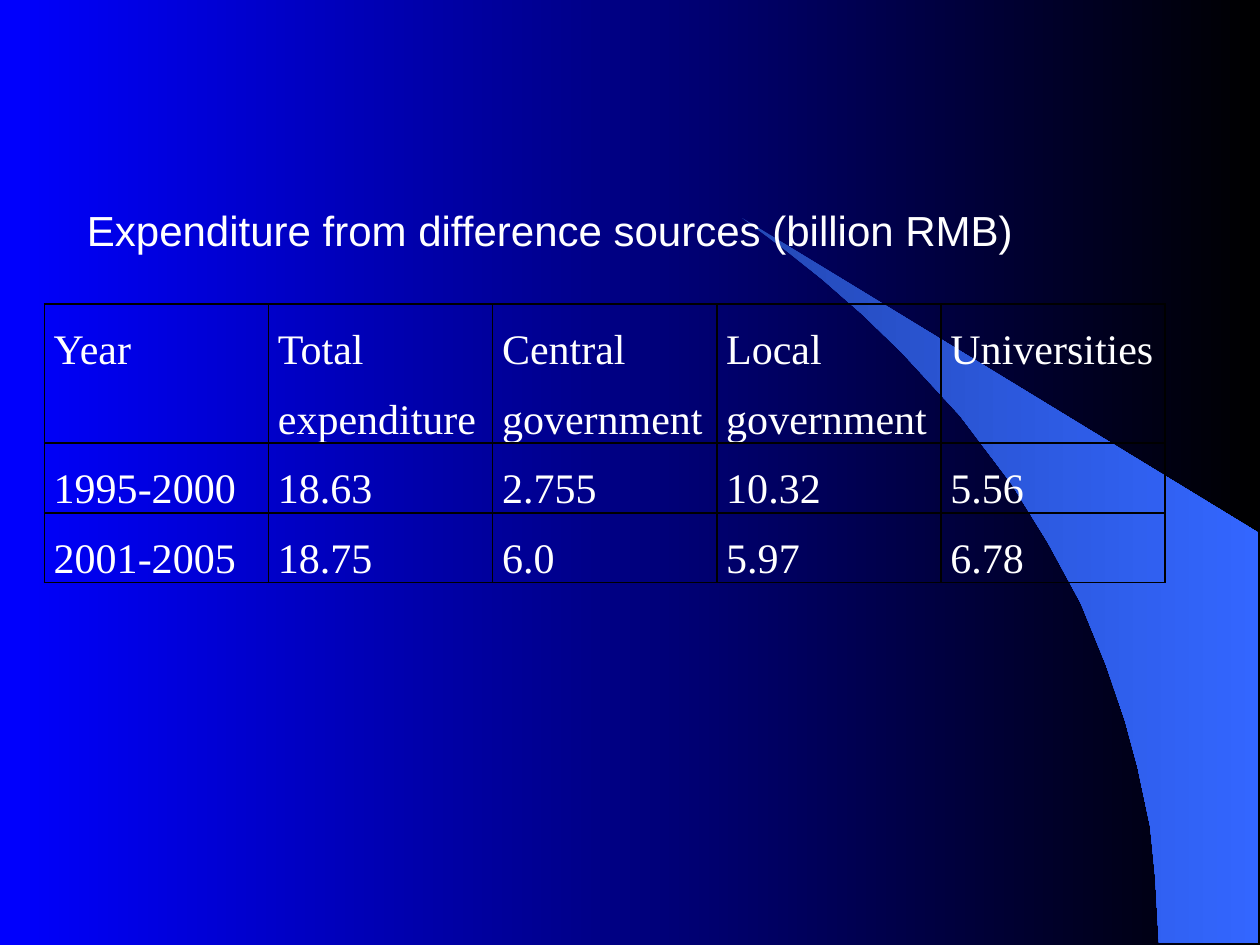
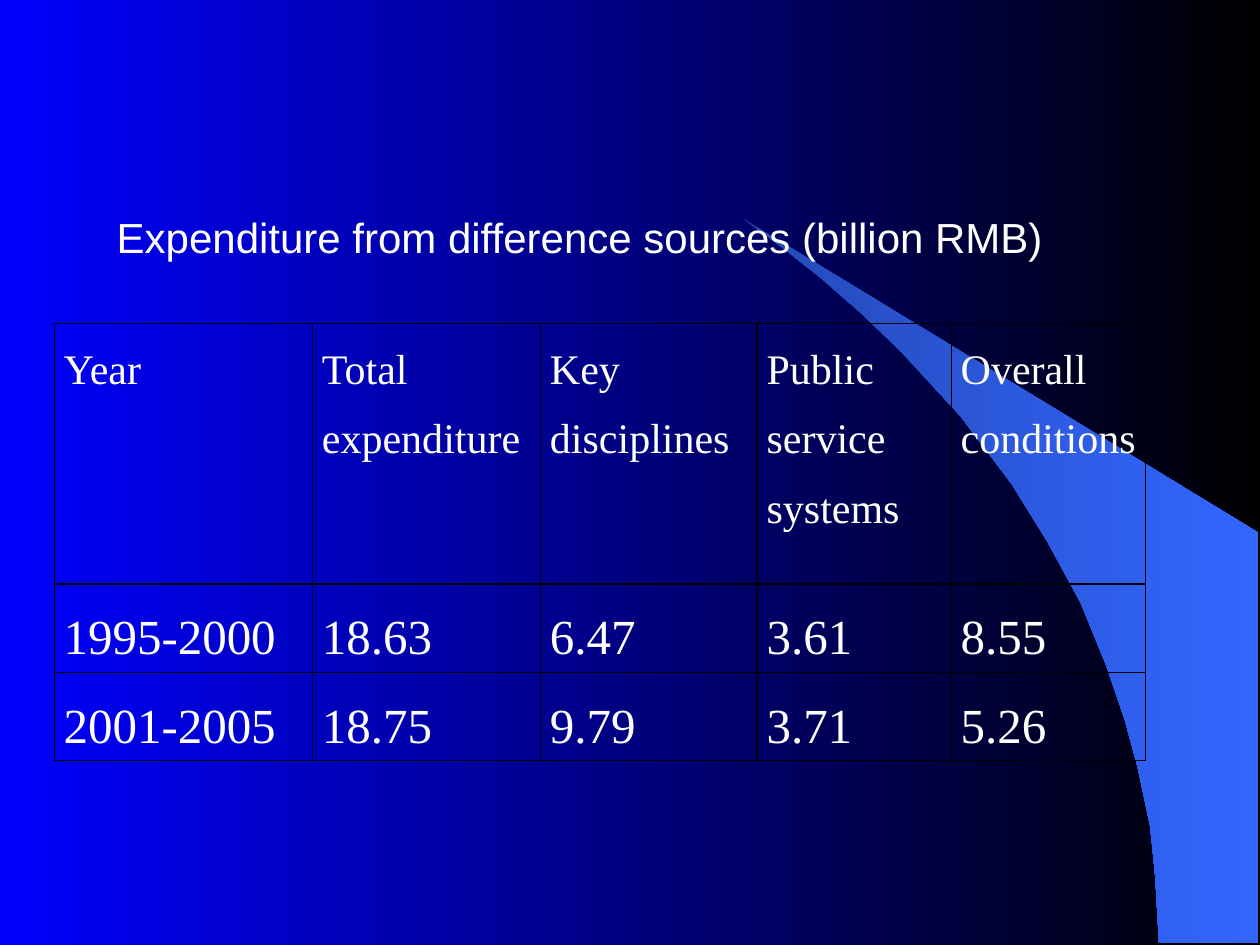
from collections import namedtuple
from dataclasses import dataclass

from lxml.etree import SubElement
from pptx import Presentation
from pptx.dml.color import RGBColor
from pptx.enum.text import MSO_ANCHOR, MSO_AUTO_SIZE, PP_ALIGN
from pptx.oxml.ns import qn
from pptx.util import Pt

Box = namedtuple("Box", "left top width height")


@dataclass(frozen=True)
class Theme:
    background: tuple = ("0000FF", "000000")
    crescent: tuple = ("2449B6", "3366FF")
    text: str = "FFFFFF"
    border: str = "000000"
    title_font: str = "Arial"
    table_font: str = "Times New Roman"
    title_size: int = 24
    header_size: int = 24
    line_spacing: float = 1.5
    border_width: int = 1
    cell_inset: float = 5.4


THEME = Theme()
SLIDE = Box(0, 0, 720, 540)
CRESCENT_BOX = Box(424, 124.5, 295.2, 414.5)
TITLE = "Expenditure from difference sources (billion RMB)"

# Inner curve of the crescent, from its tip to its foot, relative to its box
INNER_CURVE = [
    (0, 0), (25.2, 18.7), (46.1, 35.3), (69.1, 55.4), (91.4, 77),
    (124.6, 113), (154.1, 152), (175, 185.8), (193.7, 220.3),
    (208.1, 255.6), (218.9, 287.3), (226.1, 313.9), (233.3, 347.8),
    (236.2, 376.6), (238.3, 414),
]
OUTER_EDGE_TOP = 180

FUNDING_SOURCES = [
    ["Year", "Total expenditure", "Central government", "Local government", "Universities"],
    ["1995-2000", "18.63", "2.755", "10.32", "5.56"],
    ["2001-2005", "18.75", "6.0", "5.97", "6.78"],
]
SPENDING_AREAS = [
    ["Year", "Total expenditure", "Key disciplines", "Public service systems", "Overall conditions"],
    ["1995-2000", "18.63", "6.47", "3.61", "8.55"],
    ["2001-2005", "18.75", "9.79", "3.71", "5.26"],
]


def fill_across(fill, colours):
    """Fill with a gradient that runs from left to right."""
    fill.gradient()
    fill.gradient_angle = 0
    for stop, colour in zip(fill.gradient_stops, colours):
        stop.color.rgb = RGBColor.from_string(colour)


def style_runs(paragraph, font_name, size):
    for run in paragraph.runs:
        run.font.name = font_name
        run.font.size = Pt(size)
        run.font.bold = False
        run.font.color.rgb = RGBColor.from_string(THEME.text)


def add_crescent(slide, master, box):
    """Draw the crescent and hand it to the master, behind its placeholders."""
    outline = INNER_CURVE + [(box.width, box.height), (box.width, OUTER_EDGE_TOP)]
    points = [(Pt(x), Pt(y)) for x, y in outline]
    builder = slide.shapes.build_freeform(*points[0])
    builder.add_line_segments(points[1:], close=True)
    crescent = builder.convert_to_shape(Pt(box.left), Pt(box.top))
    crescent.shadow.inherit = False
    crescent.line.fill.background()
    fill_across(crescent.fill, THEME.crescent)
    crescent.element.nvSpPr.cNvPr.set("id", "20")
    master.shapes.element.insert(2, crescent.element)


def place_title(slide, box):
    title = slide.shapes.title
    title.left, title.top, title.width, title.height = map(Pt, box)
    frame = title.text_frame
    frame.text = TITLE
    frame.word_wrap = True
    frame.auto_size = MSO_AUTO_SIZE.NONE
    frame.vertical_anchor = MSO_ANCHOR.TOP
    heading = frame.paragraphs[0]
    heading.alignment = PP_ALIGN.LEFT
    style_runs(heading, THEME.title_font, THEME.title_size)


def add_borders(cell):
    properties = cell._tc.get_or_add_tcPr()
    for side in ("a:lnL", "a:lnR", "a:lnT", "a:lnB"):
        line = SubElement(properties, qn(side), w=str(Pt(THEME.border_width)))
        solid = SubElement(line, qn("a:solidFill"))
        SubElement(solid, qn("a:srgbClr"), val=THEME.border)


def format_cell(cell, content, size):
    cell.margin_left = cell.margin_right = Pt(THEME.cell_inset)
    cell.margin_top = cell.margin_bottom = 0
    cell.vertical_anchor = MSO_ANCHOR.TOP
    add_borders(cell)
    cell.fill.background()
    cell.text_frame.text = content
    paragraph = cell.text_frame.paragraphs[0]
    paragraph.alignment = PP_ALIGN.JUSTIFY
    paragraph.line_spacing = THEME.line_spacing
    style_runs(paragraph, THEME.table_font, size)


def add_expenditure_table(slide, box, records, widths, heights, figure_size):
    table = slide.shapes.add_table(len(records), len(widths), *map(Pt, box)).table
    table.first_row = table.horz_banding = False
    for column, width in zip(table.columns, widths):
        column.width = Pt(width)
    for row, height in zip(table.rows, heights):
        row.height = Pt(height)
    for row_number, record in enumerate(records):
        size = figure_size if row_number else THEME.header_size
        for column_number, content in enumerate(record):
            format_cell(table.cell(row_number, column_number), content, size)


def add_expenditure_slide(deck, title_box, table_corner, records, widths, heights, figure_size):
    slide = deck.slides.add_slide(deck.slide_layouts.get_by_name("Title Only"))
    place_title(slide, title_box)
    table_box = Box(*table_corner, sum(widths), sum(heights))
    add_expenditure_table(slide, table_box, records, widths, heights, figure_size)
    return slide


def main():
    deck = Presentation()
    deck.slide_width, deck.slide_height = Pt(SLIDE.width), Pt(SLIDE.height)
    fill_across(deck.slide_master.background.fill, THEME.background)

    sources_slide = add_expenditure_slide(
        deck, Box(42.5, 113, 590, 36), (25.3, 173.6), FUNDING_SOURCES,
        widths=[128.1] * 5, heights=[79.5, 39.8, 39.8], figure_size=24)
    add_expenditure_slide(
        deck, Box(59.5, 117, 572.5, 36.5), (31, 184.8), SPENDING_AREAS,
        widths=[147.6, 130.3, 123.8, 110.9, 110.9],
        heights=[149, 50.4, 50.4], figure_size=28)
    add_crescent(sources_slide, deck.slide_master, CRESCENT_BOX)

    deck.save("out.pptx")


if __name__ == "__main__":
    main()
